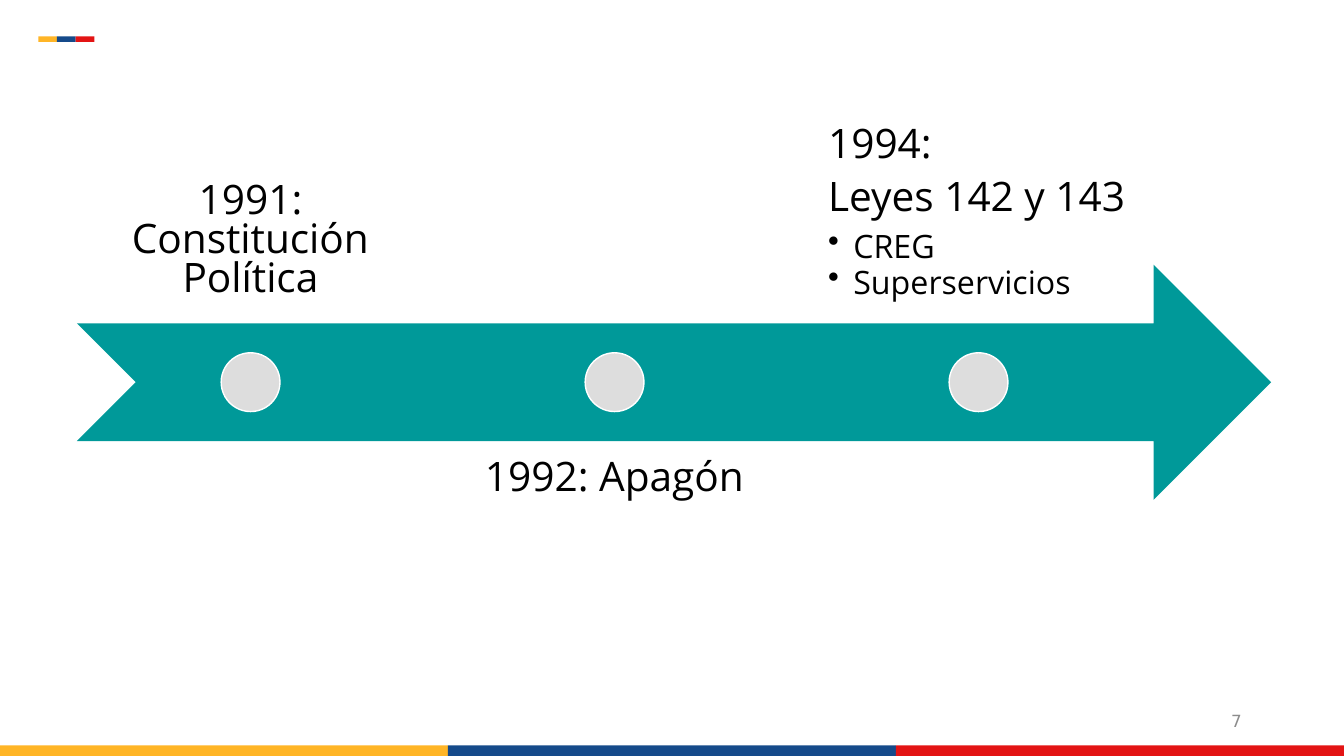
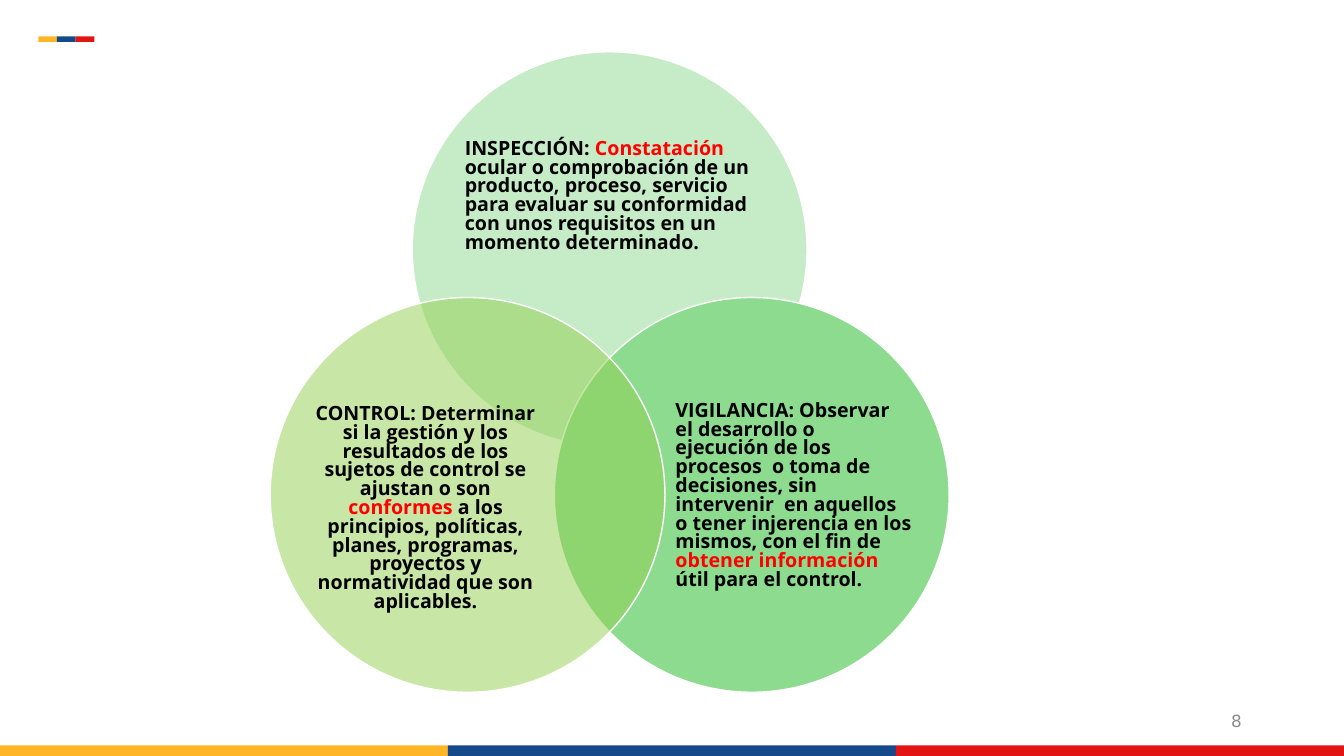
from dataclasses import dataclass

from lxml import etree
from pptx import Presentation
from pptx.dml.color import RGBColor
from pptx.enum import shapes, text
from pptx.oxml import ns
from pptx.util import Pt

LEFT, CENTER, RIGHT = text.PP_ALIGN.LEFT, text.PP_ALIGN.CENTER, text.PP_ALIGN.RIGHT
TOP, MIDDLE, BOTTOM = text.MSO_ANCHOR.TOP, text.MSO_ANCHOR.MIDDLE, text.MSO_ANCHOR.BOTTOM
OVAL = shapes.MSO_SHAPE.OVAL


@dataclass(frozen=True)
class Theme:
    flag: tuple = ("FFB526", "154A8A", "E31414")
    ink: str = "000000"
    accent: str = "FF0000"
    outline: str = "FFFFFF"
    number: str = "8C8C8C"
    arrow: str = "009999"
    dot: str = "DDDDDD"
    green: str = "8DDB8F"
    lime: str = "92D050"
    font: str = "Open Sans"
    number_font: str = "DejaVu Sans"
    event_size: int = 29
    bullet_size: int = 23
    circle_size: int = 14
    number_size: int = 12
    line_spacing: float = 0.8


THEME = Theme()
SLIDE_WIDTH, SLIDE_HEIGHT = 960, 540
FIRST_NUMBER = 7

# Each event: headings, bullets, alignment, whether it stands above the arrow
EVENTS = [
    (["1991: Constitución Política"], [], CENTER, True),
    (["1992: Apagón"], [], CENTER, False),
    (["1994:", "Leyes 142 y 143"], ["CREG", "Superservicios"], LEFT, True),
]

# Each function: circle centre, fill, opacity, text box, alignment, (words, accented) runs
FUNCTIONS = [
    ((435.5, 178), THEME.green, 50, (332, 77, 207, 127), LEFT, [
        ("INSPECCIÓN: ", False),
        ("Constatación", True),
        (" ocular o comprobación de un producto, proceso, servicio para evaluar "
         "su conformidad con unos requisitos en un momento determinado.", False)]),
    ((537, 353.5), THEME.green, 100, (482.5, 277, 169, 155), LEFT, [
        ("VIGILANCIA: Observar el desarrollo o ejecución de los procesos  o toma de "
         "decisiones, sin intervenir  en aquellos o tener injerencia en los mismos, "
         "con el fin de ", False),
        ("obtener información ", True),
        ("útil para el control.", False)]),
    ((334, 353.5), THEME.lime, 50, (219.5, 286, 169, 155), CENTER, [
        ("CONTROL: Determinar si la gestión y los resultados de los sujetos de "
         "control se ajustan o son ", False),
        ("conformes", True),
        (" a los principios, políticas, planes, programas, proyectos y "
         "normatividad que son aplicables.", False)]),
]


def add_filled(slide, preset, box, color, outlined=False, opacity=100):
    shape = slide.shapes.add_shape(preset, *map(Pt, box))
    shape.shadow.inherit = False
    shape.fill.solid()
    shape.fill.fore_color.rgb = RGBColor.from_string(color)
    if outlined:
        shape.line.color.rgb = RGBColor.from_string(THEME.outline)
        shape.line.width = Pt(1)
    else:
        shape.line.fill.background()
    if opacity < 100:
        fill_color = shape.fill._xPr.find(".//" + ns.qn("a:srgbClr"))
        etree.SubElement(fill_color, ns.qn("a:alpha"), val=str(opacity * 1000))


def add_circle(slide, center, diameter, color, opacity=100):
    x, y = center
    box = (x - diameter / 2, y - diameter / 2, diameter, diameter)
    add_filled(slide, OVAL, box, color, outlined=True, opacity=opacity)


def add_text_frame(slide, box, anchor, inset=0):
    frame = slide.shapes.add_textbox(*map(Pt, box)).text_frame
    frame.word_wrap = True
    frame.vertical_anchor = anchor
    frame.margin_left = frame.margin_right = Pt(inset)
    frame.margin_top = frame.margin_bottom = Pt(inset)
    return frame


def style(paragraph, size, align, color=THEME.ink, font=THEME.font, bold=False):
    paragraph.alignment = align
    paragraph.font.name = font
    paragraph.font.size = Pt(size)
    paragraph.font.bold = bold
    paragraph.font.color.rgb = RGBColor.from_string(color)


def add_tricolor(slide, left, top, width, height):
    part = width / len(THEME.flag)
    for i, color in enumerate(THEME.flag):
        add_filled(slide, shapes.MSO_SHAPE.RECTANGLE,
                   (left + i * part, top, part, height), color)


def add_number(slide, number):
    paragraph = add_text_frame(slide, (678, 500.5, 209, 29), MIDDLE).paragraphs[0]
    field = etree.SubElement(paragraph._p, ns.qn("a:fld"), type="slidenum",
                             id="{B6F15528-21DE-4FAA-801E-634DDDAF4B2B}")
    properties = etree.SubElement(field, ns.qn("a:rPr"), lang="es-CO",
                                  sz=str(THEME.number_size * 100))
    fill = etree.SubElement(properties, ns.qn("a:solidFill"))
    etree.SubElement(fill, ns.qn("a:srgbClr"), val=THEME.number)
    etree.SubElement(properties, ns.qn("a:latin"), typeface=THEME.number_font)
    etree.SubElement(field, ns.qn("a:t")).text = str(number)
    style(paragraph, THEME.number_size, RIGHT, THEME.number, THEME.number_font)


def add_bullet(paragraph, indent=18):
    properties = paragraph._p.get_or_add_pPr()
    properties.set("marL", str(Pt(indent)))
    properties.set("indent", str(-Pt(indent)))
    etree.SubElement(properties, ns.qn("a:buChar"), char="•")


def draw_timeline(slide):
    left, top, width, height = arrow = (55, 189, 853, 168)
    add_filled(slide, shapes.MSO_SHAPE.NOTCHED_RIGHT_ARROW, arrow, THEME.arrow)
    label_width, pitch, dot = 248, 260, 42
    shaft_top, shaft_bottom = top + height / 4, top + height * 3 / 4
    for i, (headings, bullets, align, above) in enumerate(EVENTS):
        x = left + i * pitch
        label_top = shaft_top - height if above else shaft_bottom
        frame = add_text_frame(slide, (x, label_top, label_width, height),
                               BOTTOM if above else TOP, inset=16.5)
        for j, line in enumerate(headings + bullets):
            paragraph = frame.paragraphs[0] if j == 0 else frame.add_paragraph()
            paragraph.text = line
            is_bullet = j >= len(headings)
            if is_bullet:
                add_bullet(paragraph)
            paragraph.line_spacing = THEME.line_spacing
            paragraph.space_after = Pt(3.5 if is_bullet else 10)
            style(paragraph, THEME.bullet_size if is_bullet else THEME.event_size, align)
        add_circle(slide, (x + label_width / 2, top + height / 2), dot, THEME.dot)


def draw_functions(slide):
    for center, color, opacity, box, align, runs in FUNCTIONS:
        add_circle(slide, center, 282, color, opacity)
        paragraph = add_text_frame(slide, box, MIDDLE).paragraphs[0]
        paragraph.line_spacing = THEME.line_spacing
        style(paragraph, THEME.circle_size, align, bold=True)
        for words, accented in runs:
            run = paragraph.add_run()
            run.text = words
            if accented:
                run.font.color.rgb = RGBColor.from_string(THEME.accent)


def main():
    deck = Presentation()
    deck.slide_width, deck.slide_height = Pt(SLIDE_WIDTH), Pt(SLIDE_HEIGHT)
    deck.element.set("firstSlideNum", str(FIRST_NUMBER))
    blank = deck.slide_layouts[6]
    for number, draw in enumerate((draw_timeline, draw_functions), FIRST_NUMBER):
        slide = deck.slides.add_slide(blank)
        add_tricolor(slide, 27.4, 26, 40, 4)
        add_tricolor(slide, 0, SLIDE_HEIGHT - 7.5, SLIDE_WIDTH, 7.5)
        add_number(slide, number)
        draw(slide)
    deck.save("out.pptx")


if __name__ == "__main__":
    main()
